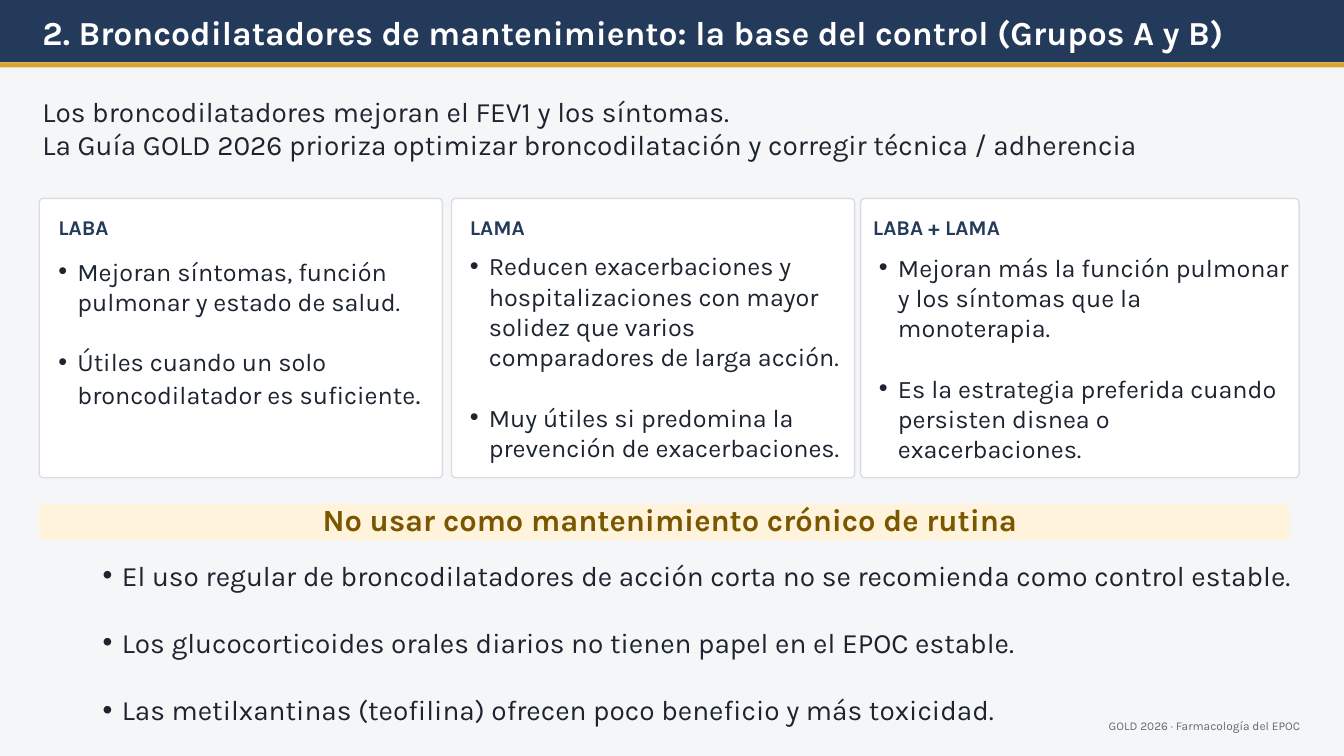
from dataclasses import dataclass

from lxml import etree
from pptx import Presentation
from pptx import util as u
from pptx.dml.color import RGBColor
from pptx.enum import shapes, text
from pptx.oxml import ns
from pptx.util import Cm

NAVY = RGBColor(0x24, 0x3A, 0x5A)
GOLD = RGBColor(0xD8, 0xA3, 0x2F)
CREAM = RGBColor(0xFF, 0xF4, 0xDB)
BROWN = RGBColor(0x7A, 0x56, 0x00)
INK = RGBColor(0x1C, 0x24, 0x30)
GREY = RGBColor(0x5F, 0x6B, 0x78)
BORDER = RGBColor(0xD9, 0xDD, 0xE3)
PALE = RGBColor(0xF5, 0xF6, 0xF7)
WHITE = RGBColor(0xFF, 0xFF, 0xFF)

FONT = "Karla"
BULLET_INDENT = Cm(0.48)
LINE_PITCH = 1.2
CARD_TOP, CARD_HEIGHT = 5.0, 7.04
HEADING_TOP, HEADING_HEIGHT = 5.46, 0.51


@dataclass(frozen=True)
class Area:
    """Left, top, width and height in centimetres."""
    left: float
    top: float
    width: float
    height: float

    def lengths(self) -> tuple:
        return Cm(self.left), Cm(self.top), Cm(self.width), Cm(self.height)


@dataclass(frozen=True)
class Style:
    size: float
    color: RGBColor
    bold: bool = False


@dataclass(frozen=True)
class Span:
    words: str
    size: float


@dataclass(frozen=True)
class Card:
    left: float
    width: float
    heading: str
    heading_left: float
    heading_width: float
    body: Area
    points: tuple[tuple[Span, ...], ...]


CARDS = (
    Card(0.99, 10.16, "LABA", 1.47, 9.25, Area(1.47, 6.45, 9.45, 3.73), (
        (Span("Mejoran síntomas, función pulmonar y estado de salud.", 18),),
        (Span("Útiles cuando un solo broncodilatador es suficiente", 18), Span(".", 20)),
    )),
    Card(11.38, 10.16, "LAMA", 11.84, 9.25, Area(11.84, 6.32, 9.45, 5.26), (
        (Span("Reducen exacerbaciones y hospitalizaciones con mayor solidez "
              "que varios comparadores de larga acción.", 18),),
        (Span("Muy útiles si predomina la prevención de exacerbaciones.", 18),),
    )),
    Card(21.69, 11.05, "LABA + LAMA", 22.0, 10.13, Area(22.15, 6.35, 10.34, 5.13), (
        (Span("Mejoran más la función pulmonar y los síntomas que la monoterapia.", 18),),
        (Span("Es la estrategia preferida cuando persisten disnea o exacerbaciones.", 18),),
    )),
)

WARNINGS = tuple((Span(words, 20),) for words in (
    "El uso regular de broncodilatadores de acción corta no se recomienda como control estable.",
    "Los glucocorticoides orales diarios no tienen papel en el EPOC estable.",
    "Las metilxantinas (teofilina) ofrecen poco beneficio y más toxicidad.",
))


def add_panel(page, area: Area, fill: RGBColor, radius: float = 0,
              line: RGBColor | None = None) -> None:
    kind = shapes.MSO_SHAPE.ROUNDED_RECTANGLE if radius else shapes.MSO_SHAPE.RECTANGLE
    panel = page.shapes.add_shape(kind, *area.lengths())
    panel.shadow.inherit = False
    panel.fill.solid()
    panel.fill.fore_color.rgb = fill
    if radius:
        panel.adjustments[0] = radius
    if line is None:
        panel.line.fill.background()
    else:
        panel.line.color.rgb = line
        panel.line.width = u.Pt(1)


def prepare_frame(box, anchor: text.MSO_ANCHOR):
    frame = box.text_frame
    frame.word_wrap = True
    frame.auto_size = text.MSO_AUTO_SIZE.NONE
    frame.vertical_anchor = anchor
    frame.margin_left = frame.margin_top = frame.margin_right = frame.margin_bottom = 0
    return frame


def add_span(para, words: str, style: Style) -> None:
    span = para.add_run()
    span.text = words
    span.font.name = FONT
    span.font.size = u.Pt(style.size)
    span.font.bold = style.bold
    span.font.color.rgb = style.color


def fill_lines(box, lines: tuple[str, ...], style: Style,
               align: text.PP_ALIGN = text.PP_ALIGN.LEFT) -> None:
    frame = prepare_frame(box, text.MSO_ANCHOR.MIDDLE)
    for index, words in enumerate(lines):
        para = frame.add_paragraph() if index else frame.paragraphs[0]
        para.alignment = align
        add_span(para, words, style)


def add_label(page, area: Area, style: Style, *lines: str,
              align: text.PP_ALIGN = text.PP_ALIGN.LEFT) -> None:
    fill_lines(page.shapes.add_textbox(*area.lengths()), lines, style, align)


def add_bullets(page, area: Area, points: tuple[tuple[Span, ...], ...]) -> None:
    frame = prepare_frame(page.shapes.add_textbox(*area.lengths()), text.MSO_ANCHOR.TOP)
    for index, spans in enumerate(points):
        para = frame.add_paragraph() if index else frame.paragraphs[0]
        if index:
            para.space_before = u.Pt(LINE_PITCH * spans[0].size)
        properties = para._p.get_or_add_pPr()
        properties.set("marL", str(BULLET_INDENT))
        properties.set("indent", str(-BULLET_INDENT))
        etree.SubElement(properties, ns.qn("a:buFont")).set("typeface", "Arial")
        etree.SubElement(properties, ns.qn("a:buChar")).set("char", "•")
        for span in spans:
            add_span(para, span.words, Style(span.size, INK))


def add_card(page, card: Card) -> None:
    add_panel(page, Area(card.left, CARD_TOP, card.width, CARD_HEIGHT), WHITE, 0.015, BORDER)
    add_label(page, Area(card.heading_left, HEADING_TOP, card.heading_width, HEADING_HEIGHT),
              Style(15, NAVY, True), card.heading)
    add_bullets(page, card.body, card.points)


def add_header(page) -> None:
    add_panel(page, Area(0, 0, 33.87, 1.57), NAVY)
    add_panel(page, Area(0, 1.57, 33.87, 0.13), GOLD)
    title = page.shapes.title
    title.left, title.top, title.width, title.height = Area(1.07, 0.3, 31.65, 0.99).lengths()
    fill_lines(title, ("2. Broncodilatadores de mantenimiento: la base del control (Grupos A y B)",),
               Style(24, WHITE, True))
    # Bring the title in front of the band
    page.shapes.element.append(title.element)


def main() -> None:
    deck = Presentation()
    deck.slide_width, deck.slide_height = Cm(33.87), Cm(19.05)
    page = deck.slides.add_slide(deck.slide_layouts.get_by_name("Title Only"))
    page.background.fill.solid()
    page.background.fill.fore_color.rgb = PALE

    # Header and introduction
    add_header(page)
    add_label(page, Area(1.07, 2.08, 31.22, 2.29), Style(20, INK),
              "Los broncodilatadores mejoran el FEV1 y los síntomas.",
              "La Guía GOLD 2026 prioriza optimizar broncodilatación y corregir técnica / adherencia")

    # Drug classes
    for card in CARDS:
        add_card(page, card)

    # Warning banner and its points
    add_panel(page, Area(0.99, 12.7, 31.5, 0.91), CREAM, 0.083)
    add_label(page, Area(8.13, 13.03, 24.0, 0.13), Style(22, BROWN, True),
              "No usar como mantenimiento crónico de rutina")
    add_bullets(page, Area(2.59, 14.07, 31.2, 4.7), WARNINGS)

    # Footer
    add_label(page, Area(25.91, 18.08, 6.86, 0.41), Style(8.5, GREY),
              "GOLD 2026 · Farmacología del EPOC", align=text.PP_ALIGN.RIGHT)

    deck.save("out.pptx")


if __name__ == "__main__":
    main()
